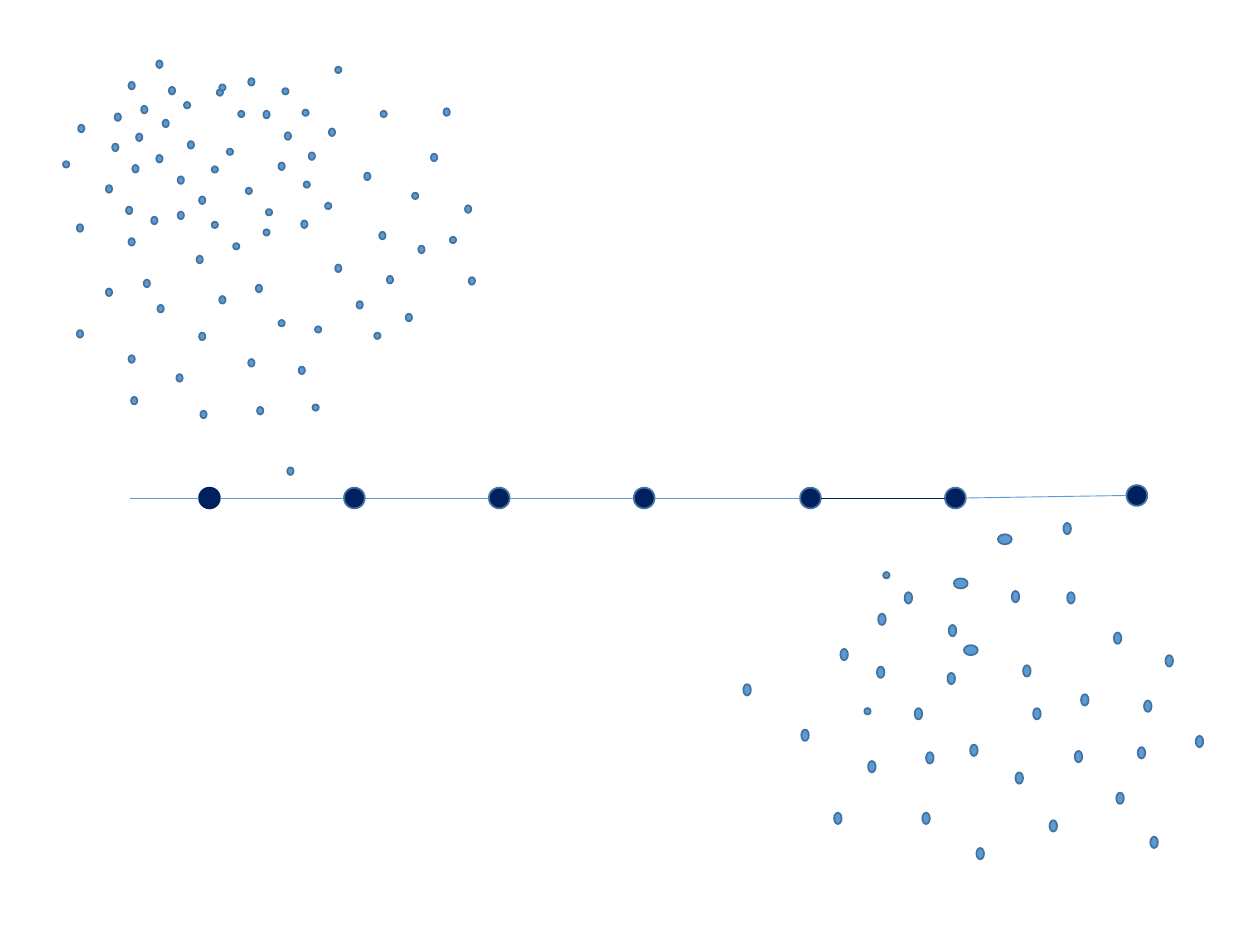
from dataclasses import dataclass
from itertools import pairwise
from typing import Iterator

from lxml.etree import SubElement
from pptx import Presentation
from pptx.dml.color import RGBColor
from pptx.enum.shapes import MSO_CONNECTOR as Connector, MSO_SHAPE as Shape
from pptx.oxml.ns import qn
from pptx.slide import Slide
from pptx.util import Cm, Pt

BLUE = RGBColor(0x5B, 0x9B, 0xD5)
OUTLINE = RGBColor(0x43, 0x73, 0x9E)
NAVY = RGBColor(0x00, 0x20, 0x60)

CM_PER_INCH = 2.54
STEPS_PER_INCH = 100
BAND_HEIGHT = 50

MARKER_SIZE = 16.5
MARKER_PITCH = 115
TIMELINE_START = 103
TIMELINE_TOP = 387
RAISED_TOP = 385


@dataclass(frozen=True)
class Box:
    left: float
    top: float
    width: float
    height: float

    @property
    def right(self) -> float:
        return self.left + self.width

    @property
    def middle(self) -> float:
        return self.top + self.height / 2


@dataclass(frozen=True)
class Scatter:
    dot_width: float
    dot_height: float
    bands: dict[int, list[tuple[int, int]]]

    def boxes(self) -> Iterator[Box]:
        for band, dots in self.bands.items():
            for left, drop in dots:
                yield Box(left, band * BAND_HEIGHT + drop,
                          self.dot_width, self.dot_height)


UPPER_OVALS = Scatter(5, 6, {
    0: [(124, 48)],
    1: [(62, 49), (91, 40), (102, 15), (112, 34), (129, 45), (134, 19),
        (197, 12), (209, 38), (352, 36)],
    2: [(84, 47), (89, 14), (105, 31), (108, 6), (124, 23), (141, 40), (149, 12),
        (221, 29), (226, 5), (245, 21), (261, 2), (289, 37), (342, 22)],
    3: [(61, 28), (100, 14), (102, 39), (120, 22), (141, 18), (158, 6),
        (239, 25), (301, 34), (332, 45), (369, 13)],
    4: [(84, 29), (114, 22), (125, 42), (156, 3), (174, 35), (203, 26),
        (266, 10), (283, 39), (307, 19), (322, 49), (372, 20)],
    5: [(61, 12), (102, 32), (140, 47), (158, 14), (197, 35), (237, 41)],
    6: [(104, 15), (159, 26), (204, 23)],
    7: [(228, 21)],
})
CIRCLES = Scatter(5, 5, {
    1: [(146, 31), (172, 21), (174, 17), (189, 38), (224, 20), (240, 37),
        (266, 3), (302, 38)],
    2: [(50, 28), (168, 32), (180, 18), (195, 49), (241, 44)],
    3: [(168, 26), (185, 43), (209, 32), (211, 16), (258, 11), (327, 3), (357, 38)],
    5: [(221, 4), (250, 9), (297, 14)],
    6: [(248, 21)],
    9: [(701, 4)],
    11: [(686, 12)],
})
LOWER_OVALS = Scatter(6, 9, {
    8: [(844, 15)],
    9: [(697, 37), (718, 20), (753, 46), (803, 19), (847, 20)],
    10: [(590, 43), (667, 15), (696, 29), (752, 34), (812, 28), (884, 2), (925, 20)],
    11: [(636, 29), (726, 12), (735, 47), (770, 41), (820, 12), (853, 46),
         (858, 1), (903, 43), (908, 6), (949, 34)],
    12: [(662, 45), (689, 4), (732, 45), (806, 13), (886, 29)],
    13: [(775, 23), (833, 1), (913, 14)],
})
WIDE_OVALS = Scatter(11, 8, {8: [(792, 24)], 9: [(757, 9)], 10: [(765, 12)]})
SCATTERS = [UPPER_OVALS, CIRCLES, LOWER_OVALS, WIDE_OVALS]


def length(steps: float) -> Cm:
    return Cm(steps / STEPS_PER_INCH * CM_PER_INCH)


def marker_run(first_left: float, count: int, top: float = TIMELINE_TOP) -> list[Box]:
    return [Box(first_left + index * MARKER_PITCH, top, MARKER_SIZE, MARKER_SIZE)
            for index in range(count)]


def add_ellipse(slide: Slide, box: Box, *, fill: RGBColor,
                outline: RGBColor = OUTLINE) -> None:
    shape = slide.shapes.add_shape(
        Shape.OVAL, length(box.left), length(box.top),
        length(box.width), length(box.height))
    shape.shadow.inherit = False
    shape.fill.solid()
    shape.fill.fore_color.rgb = fill
    shape.line.color.rgb = outline
    shape.line.width = Pt(1)


def add_line(slide: Slide, start: tuple[float, float], end: tuple[float, float],
             *, color: RGBColor = BLUE) -> None:
    connector = slide.shapes.add_connector(
        Connector.STRAIGHT, *(length(value) for value in (*start, *end)))
    connector.line.color.rgb = color
    connector.line.width = Pt(0.5)
    SubElement(connector._element.spPr, qn("a:effectLst"))


def add_timeline(slide: Slide) -> None:
    early = marker_run(158, 4)
    late = marker_run(635, 2)
    final = marker_run(894, 1, RAISED_TOP)
    markers = early + late + final
    first = markers[0]
    for marker in markers:
        add_ellipse(slide, marker, fill=NAVY,
                    outline=NAVY if marker == first else OUTLINE)
    add_line(slide, (TIMELINE_START, first.middle), (first.left, first.middle))
    for marker, following in pairwise(markers):
        add_line(slide, (marker.right, marker.middle),
                 (following.left, following.middle),
                 color=NAVY if marker == late[0] else BLUE)


def main() -> None:
    presentation = Presentation()
    presentation.slide_width = Cm(25.4)
    presentation.slide_height = Cm(19.05)
    slide = presentation.slides.add_slide(presentation.slide_layouts[6])
    for scatter in SCATTERS:
        for box in scatter.boxes():
            add_ellipse(slide, box, fill=BLUE)
    add_timeline(slide)
    presentation.save("out.pptx")


if __name__ == "__main__":
    main()
